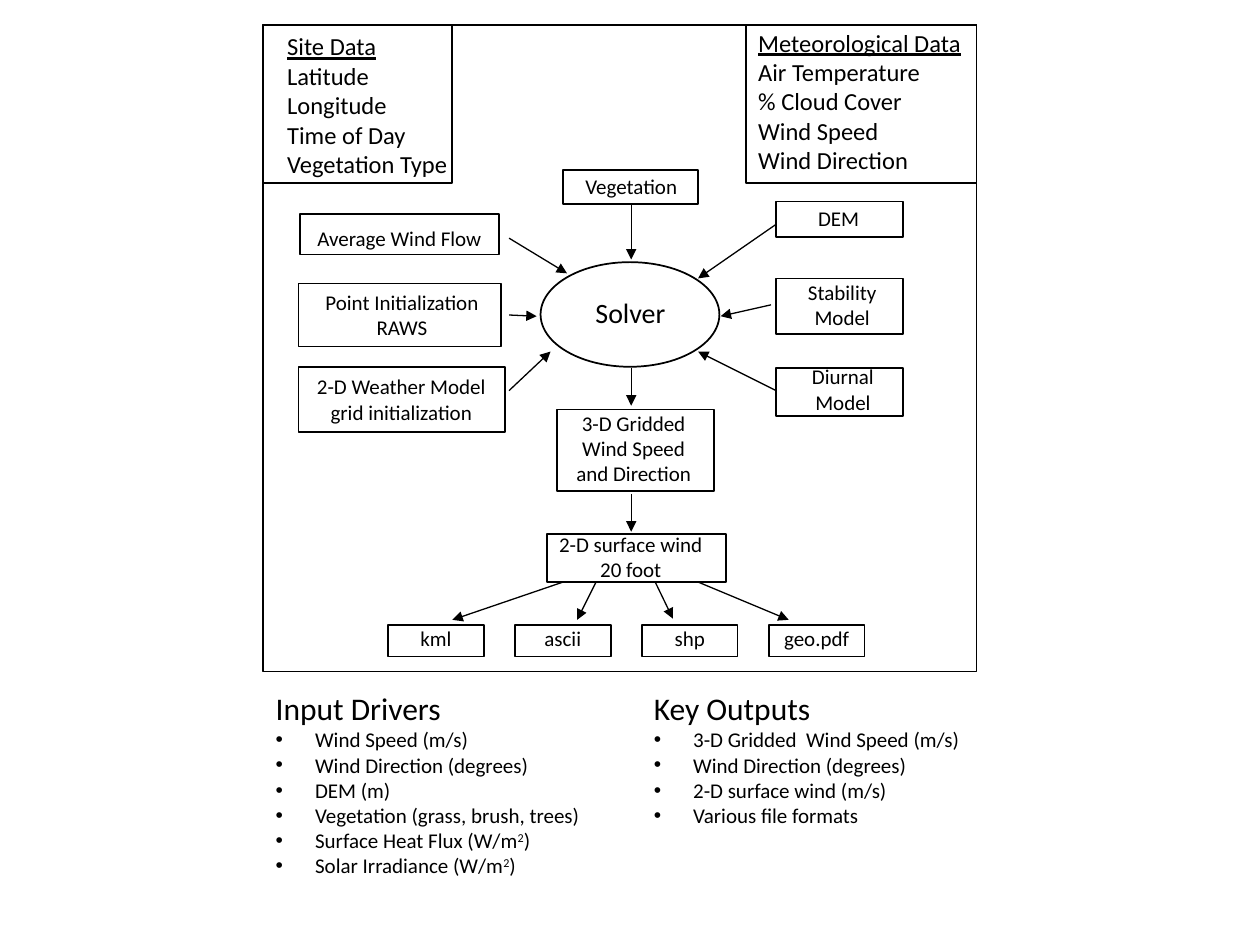
from lxml.etree import SubElement
from pptx import Presentation
from pptx.dml.color import RGBColor
from pptx.enum.shapes import MSO_CONNECTOR as Connector, MSO_SHAPE as Shape
from pptx.enum.text import MSO_AUTO_SIZE as AutoSize, PP_ALIGN as Align
from pptx.oxml.ns import qn
from pptx.util import Pt

color = RGBColor.from_string
BLACK, WHITE = "000000", "FFFFFF"

deck = Presentation()
deck.slide_width, deck.slide_height = Pt(720), Pt(540)
slide = deck.slides.add_slide(deck.slide_layouts[6])
shapes = slide.shapes


def add_outline(left, top, width, height, kind=Shape.RECTANGLE):
    outline = shapes.add_shape(kind, Pt(left), Pt(top), Pt(width), Pt(height))
    outline.shadow.inherit = False
    outline.fill.solid()
    outline.fill.fore_color.rgb = color(WHITE)
    outline.line.color.rgb = color(BLACK)
    outline.line.width = Pt(1)


def add_text(text, left, top, width, height, size=12, heading_size=None,
             underline_heading=False, align=None, bullets=False, wrap=False):
    """Write one paragraph a line; ^ encloses a superscript."""
    frame = shapes.add_textbox(Pt(left), Pt(top), Pt(width), Pt(height)).text_frame
    frame.word_wrap = wrap
    frame.auto_size = AutoSize.SHAPE_TO_FIT_TEXT
    for row, line in enumerate(text.split("\n")):
        paragraph = frame.add_paragraph() if row else frame.paragraphs[0]
        paragraph.alignment = align
        if bullets and row:
            properties = paragraph._p.get_or_add_pPr()
            properties.set("marL", str(Pt(22.5)))
            properties.set("indent", str(-Pt(22.5)))
            SubElement(properties, qn("a:buFont")).set("typeface", "Arial")
            SubElement(properties, qn("a:buChar")).set("char", "•")
        for part, words in enumerate(line.split("^")):
            run = paragraph.add_run()
            run.text = words
            run.font.name = "Calibri"
            run.font.size = Pt(size if row else heading_size or size)
            run.font.color.rgb = color(BLACK)
            if underline_heading and row == 0:
                run.font.underline = True
            if part % 2:
                run.font._element.set("baseline", "30000")


# Frame and the two data panels in its upper corners
add_outline(150.5, 14.4, 407.5, 369.4)
add_outline(150.5, 14.4, 108, 90)
add_outline(426.2, 14.4, 131.8, 90)
add_text("Site Data\nLatitude\nLongitude\nTime of Day\nVegetation Type",
         157, 14.4, 107.3, 92.2, size=14, underline_heading=True)
add_text("Meteorological Data\nAir Temperature\n% Cloud Cover\nWind Speed\nWind Direction",
         426.2, 12.2, 131.8, 92.2, size=14, underline_heading=True)

# Solver
add_outline(308.9, 149.8, 102.2, 59.8, Shape.OVAL)
add_text("Solver", 332.6, 165.6, 55.4, 26.6, size=16, align=Align.CENTER)

# Steps: label, outline, label's left, top and width, wrapping
steps = [
    ("Average Wind Flow", (171.4, 122.4, 113.8, 23), (165.6, 125.3, 125.3), True),
    ("Point Initialization\nRAWS", (170.6, 162, 115.9, 36), (167.8, 162, 123.8), True),
    ("2-D Weather Model\ngrid initialization", (170.6, 209.5, 118.1, 37.4),
     (173.5, 210.2, 111.6), False),
    ("Vegetation", (321.8, 97.2, 77, 19.4), (326.9, 95.8, 67.7), False),
    ("DEM", (443.5, 115.2, 72.7, 20.2), (460.1, 113.8, 38.2), False),
    ("Stability\nModel", (443.5, 159.1, 72.7, 31.7), (440.6, 156.2, 81.4), True),
    ("Diurnal\nModel", (443.5, 210.2, 72.7, 27.4), (456.5, 204.5, 50.4), False),
    ("3-D Gridded\nWind Speed\nand Direction", (318.2, 234, 90, 46.8),
     (321.8, 231.1, 80.6), False),
    ("2-D surface wind\n20 foot", (312.5, 305.3, 102.2, 27.4), (311.8, 300.2, 97.2), False),
]
# File formats: equal boxes at equal steps, each label centred on its box
format_width = 54.7
for column, (file_format, label_width) in enumerate(
        [("kml", 32.4), ("ascii", 36), ("shp", 31.7), ("geo.pdf", 51.8)]):
    left = 221.8 + 72.5 * column
    steps.append((file_format, (left, 357.1, format_width, 18),
                  (left + (format_width - label_width) / 2, 354.2, label_width), False))

for label, outline, label_place, wrap in steps:
    add_outline(*outline)
    label_height = 7.2 + 14.4 * len(label.split("\n"))
    add_text(label, *label_place, label_height, align=Align.CENTER, wrap=wrap)

# Arrows: start x, y and end x, y
arrows = [
    (290.9, 136.1, 324, 156.2),    # average wind flow to solver
    (290.9, 180, 306.7, 180.7),    # point initialization to solver
    (290.9, 223.2, 314.6, 200.9),  # weather model to solver
    (360.7, 116.6, 360.7, 148.3),  # vegetation to solver
    (443.5, 128.2, 398.9, 159.1),  # DEM to solver
    (440.6, 174.2, 411.8, 180.7),  # stability to solver
    (443.5, 223.2, 398.9, 200.9),  # diurnal to solver
    (360.7, 210.2, 360.7, 231.8),  # solver to 3-D wind
    (360.7, 282.2, 360.7, 303.8),  # 3-D wind to surface wind
    (321.8, 332.6, 258.5, 354.2),  # surface wind to kml
    (340.6, 332.6, 329.8, 354.2),  # surface wind to ascii
    (374.4, 332.6, 384.5, 353.5),  # surface wind to shp
    (398.9, 332.6, 450.7, 354.2),  # surface wind to geo.pdf
]
for ends in arrows:
    arrow = shapes.add_connector(Connector.STRAIGHT, *map(Pt, ends))
    arrow.line.color.rgb = color(BLACK)
    arrow.line.width = Pt(0.75)
    SubElement(arrow.line._get_or_add_ln(), qn("a:tailEnd")).set("type", "triangle")
    SubElement(arrow._element.spPr, qn("a:effectLst"))

# Lists under the frame
add_text("Input Drivers\nWind Speed (m/s)\nWind Direction (degrees)\nDEM (m)\n"
         "Vegetation (grass, brush, trees)\nSurface Heat Flux (W/m^2^)\n"
         "Solar Irradiance (W/m^2^)",
         150.5, 390.2, 190.1, 143.3, heading_size=18, bullets=True)
add_text("Key Outputs\n3-D Gridded  Wind Speed (m/s)\nWind Direction (degrees)\n"
         "2-D surface wind (m/s)\nVarious file formats",
         366.5, 390.2, 190.8, 87.1, heading_size=18, bullets=True)

deck.save("out.pptx")
